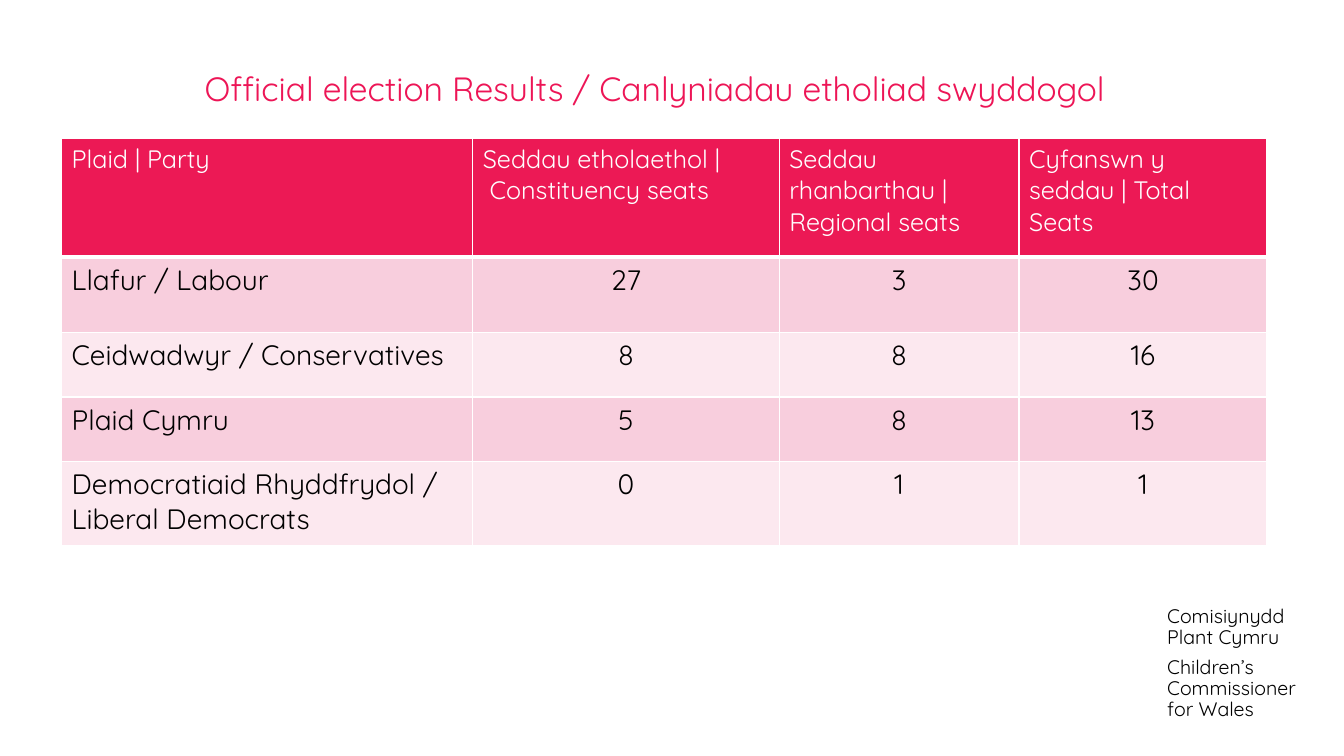
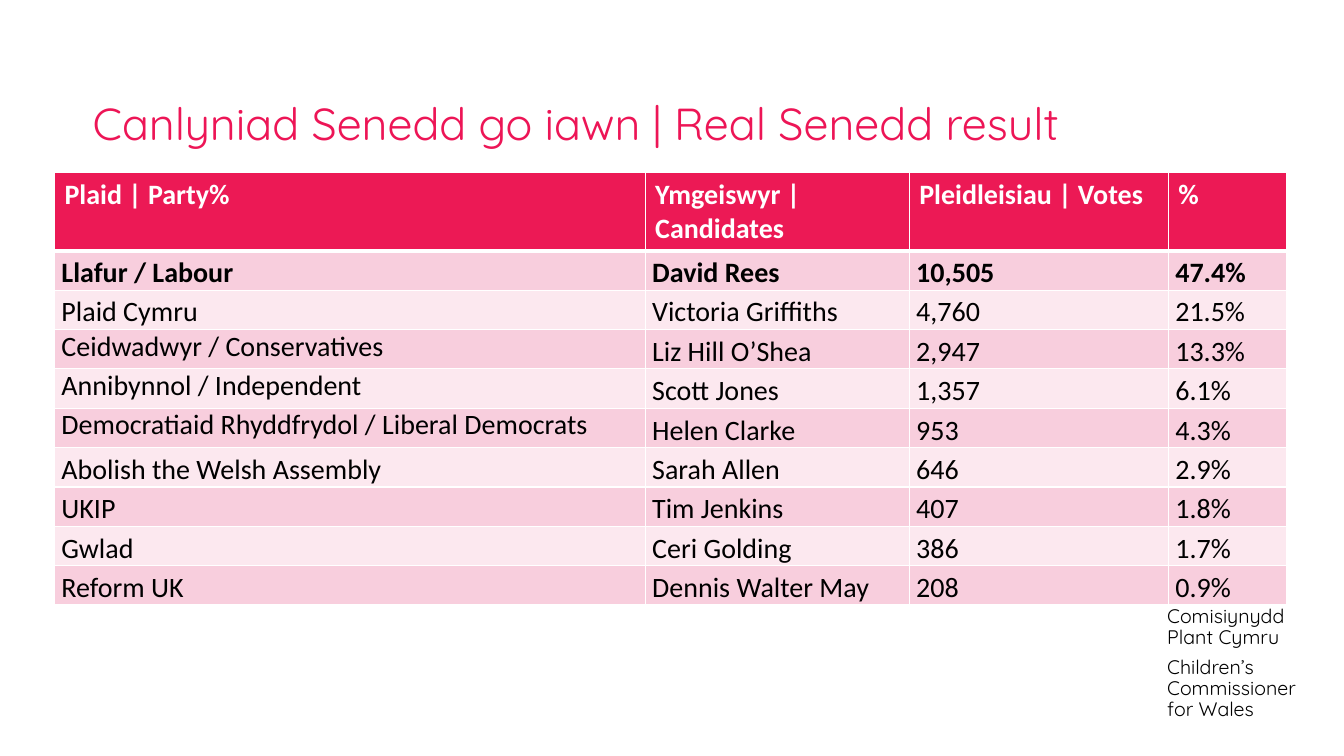
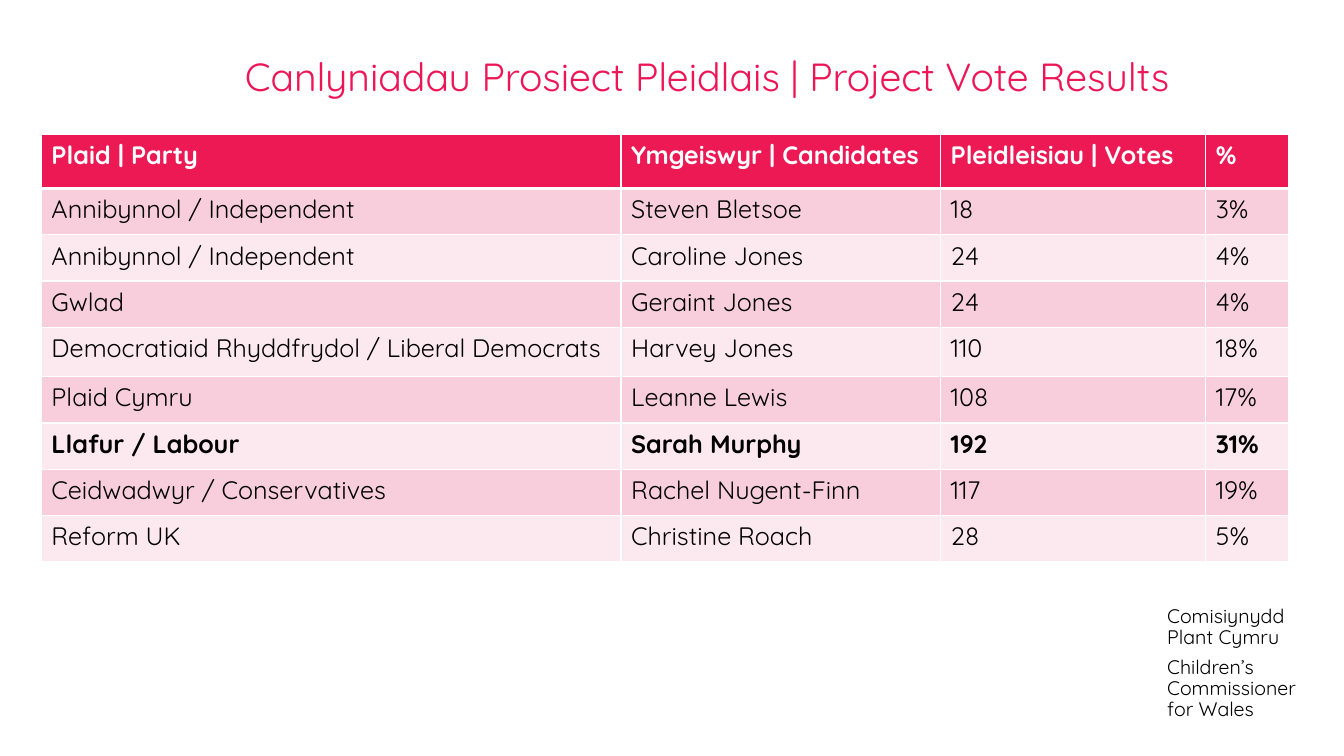
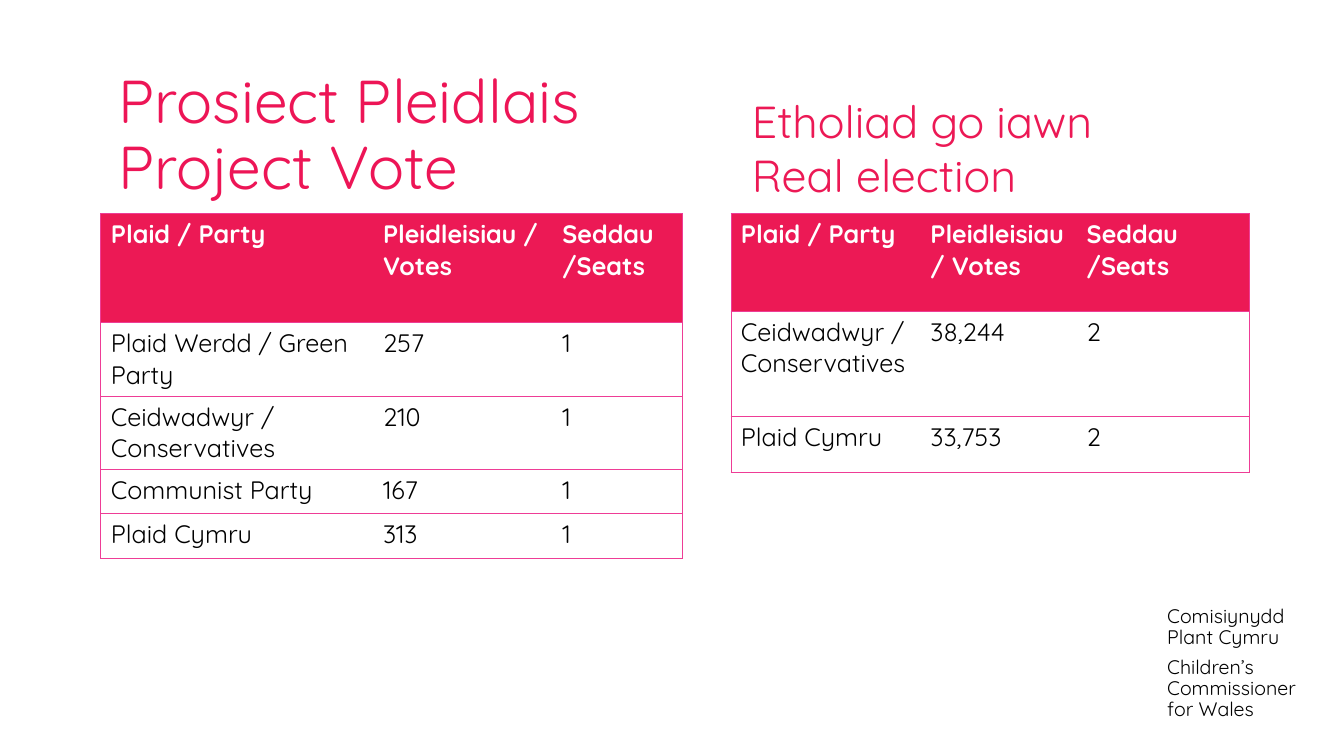
import pptx
import pptx.util
import pptx.dml.color
import pptx.enum.text
import pptx.oxml.ns
import lxml.etree

# Shared look
RED, ROSE, INK, WHITE, EDGE = "EC1955", "ED1556", "000000", "FFFFFF", "EE3D96"
BANDS = ["F8CEDD", "FCE8EF"]
FONT = "Quicksand"
WIDE, HIGH = pptx.util.Inches(13.333), pptx.util.Inches(7.5)
ALIGN = pptx.enum.text.PP_ALIGN
ANCHOR = pptx.enum.text.MSO_ANCHOR


def tint(code):
    return pptx.dml.color.RGBColor.from_string(code)


def across(share):
    """Percent of the slide width."""
    return round(WIDE * share / 100)


def down(share):
    """Percent of the slide height."""
    return round(HIGH * share / 100)


def style(para, size, color, bold=False, font=FONT, space=None):
    if space:
        para.line_spacing = space
    for run in para.runs:
        run.font.name = font
        run.font.size = pptx.util.Pt(size)
        run.font.bold = bold
        run.font.color.rgb = tint(color)


# Text boxes
def label(slide, text, spot, size, color, space=0.9, inset=0):
    left, top, width, height = spot
    box = slide.shapes.add_textbox(across(left), down(top), across(width), down(height))
    frame = box.text_frame
    frame.word_wrap = True
    frame.margin_left = frame.margin_right = pptx.util.Inches(inset)
    frame.margin_top = frame.margin_bottom = pptx.util.Inches(inset / 2)
    frame.text = text
    for para in frame.paragraphs:
        style(para, size, color, space=space)
    return frame


def title(slide, text, spot, size):
    label(slide, text, spot, size, ROSE)


def footer(slide):
    text = "Comisiynydd\vPlant Cymru\nChildren’s\vCommissioner\vfor Wales"
    frame = label(slide, text, (86.85, 80.13, 10.35, 15.33), 14, INK)
    frame.vertical_anchor = ANCHOR.MIDDLE
    frame.paragraphs[0].space_after = pptx.util.Pt(6)


# Tables
def border(cell, side, color, points):
    props = cell._tc.get_or_add_tcPr()
    line = lxml.etree.SubElement(props, pptx.oxml.ns.qn("a:ln" + side))
    line.set("w", str(pptx.util.Pt(points)))
    if not color:
        lxml.etree.SubElement(line, pptx.oxml.ns.qn("a:noFill"))
        return
    fill = lxml.etree.SubElement(line, pptx.oxml.ns.qn("a:solidFill"))
    lxml.etree.SubElement(fill, pptx.oxml.ns.qn("a:srgbClr")).set("val", color)


def frame_cell(cell, row, col, last, lined):
    """Red outlines with no inner uprights, or white rules all round."""
    if lined:
        border(cell, "L", EDGE if col == 0 else None, 0.5)
        border(cell, "R", EDGE if col == last else None, 0.5)
        border(cell, "T", EDGE, 0.5)
        border(cell, "B", EDGE, 0.5)
        return
    border(cell, "L", WHITE, 1)
    border(cell, "R", WHITE, 1)
    border(cell, "T", WHITE, 3 if row == 1 else 1)
    border(cell, "B", WHITE, 3 if row == 0 else 1)


def grid(slide, spot, cols, rows, data, size=18, head=18, font=FONT,
         strong=True, winner=None, lined=False):
    shape = slide.shapes.add_table(len(rows), len(cols), across(spot[0]), down(spot[1]),
                                   across(sum(cols)), down(sum(rows)))
    table = shape.table
    table.first_row = table.horz_banding = False
    for col, width in enumerate(cols):
        table.columns[col].width = across(width)
    for row, height in enumerate(rows):
        table.rows[row].height = down(height)
        for col, text in enumerate(data[row]):
            cell = table.cell(row, col)
            frame_cell(cell, row, col, len(cols) - 1, lined)
            if row and lined:
                cell.fill.background()
            else:
                cell.fill.solid()
                cell.fill.fore_color.rgb = tint(BANDS[(row - 1) % 2] if row else RED)
            cell.text_frame.text = text
            for para in cell.text_frame.paragraphs:
                style(para, size if row else head, INK if row else WHITE,
                      row == winner if row else strong, font)
    return table


def body(table):
    """Cells below the heading, with their row and column."""
    for row in range(1, len(table.rows)):
        for col in range(len(table.columns)):
            yield row, col, table.cell(row, col)


# Slides
def official(slide):
    title(slide, "Official election Results / Canlyniadau etholiad swyddogol",
          (15.23, 9.6, 76.95, 12.13), 24)
    table = grid(slide, (4.58, 18.27), [30.6, 22.8, 17.85, 18.45],
                 [15.73, 10, 8.53, 8.53, 11.07], [
        ["Plaid | Party", "Seddau etholaethol |\n Constituency seats",
         "Seddau rhanbarthau | Regional seats", "Cyfanswn y seddau | Total Seats"],
        ["Llafur / Labour", "27", "3", "30"],
        ["Ceidwadwyr / Conservatives", "8", "8", "16"],
        ["Plaid Cymru", "5", "8", "13"],
        ["Democratiaid Rhyddfrydol / Liberal Democrats", "0", "1", "1"],
    ], size=20, strong=False)
    for row, col, cell in body(table):
        if col:
            cell.text_frame.paragraphs[0].alignment = ALIGN.CENTER


def senedd(slide):
    title(slide, "Canlyniad Senedd go iawn | Real Senedd result",
          (6.9, 13.47, 88.8, 6.4), 32)
    table = grid(slide, (4.05, 22.8), [43.95, 19.65, 19.28, 8.78],
                 [10.37] + [5.21] * 9, [
        ["Plaid | Party%", "Ymgeiswyr | Candidates", "Pleidleisiau | Votes", "%"],
        ["Llafur / Labour", "David Rees", "10,505", "47.4%"],
        ["Plaid Cymru", "Victoria Griffiths", "4,760", "21.5%"],
        ["Ceidwadwyr / Conservatives", "Liz Hill O’Shea", "2,947", "13.3%"],
        ["Annibynnol / Independent", "Scott Jones", "1,357", "6.1%"],
        ["Democratiaid Rhyddfrydol / Liberal Democrats", "Helen Clarke", "953", "4.3%"],
        ["Abolish the Welsh Assembly", "Sarah Allen", "646", "2.9%"],
        ["UKIP", "Tim Jenkins", "407", "1.8%"],
        ["Gwlad", "Ceri Golding", "386", "1.7%"],
        ["Reform UK", "Dennis Walter May", "208", "0.9%"],
    ], size=20, head=20, font="Calibri", winner=1)
    for row, col, cell in body(table):
        cell.margin_left = cell.margin_right = pptx.util.Inches(0.07)
        cell.margin_top = cell.margin_bottom = 0
        if col or row not in (3, 4, 5):
            cell.text_frame.paragraphs[0].line_spacing = 1.15


def project(slide):
    title(slide, "Canlyniadau Prosiect Pleidlais | Project Vote Results",
          (18.23, 7.6, 70.58, 10.13), 28)
    grid(slide, (3.08, 17.73), [43.13, 23.78, 19.73, 6.15],
         [7.2] + [6.13] * 3 + [6.53] + [6.13] * 4, [
        ["Plaid | Party", "Ymgeiswyr | Candidates", "Pleidleisiau | Votes", "%"],
        ["Annibynnol / Independent", "Steven Bletsoe", "18", "3%"],
        ["Annibynnol / Independent", "Caroline Jones", "24", "4%"],
        ["Gwlad", "Geraint Jones", "24", "4%"],
        ["Democratiaid Rhyddfrydol / Liberal Democrats", "Harvey Jones", "110", "18%"],
        ["Plaid Cymru", "Leanne Lewis", "108", "17%"],
        ["Llafur / Labour", "Sarah Murphy", "192", "31%"],
        ["Ceidwadwyr / Conservatives", "Rachel Nugent-Finn", "117", "19%"],
        ["Reform UK", "Christine Roach", "28", "5%"],
    ], winner=6)


def versus(slide):
    heads = ["Plaid / Party", "Pleidleisiau / Votes", "Seddau /Seats"]
    title(slide, "Prosiect Pleidlais\vProject Vote", (8.85, 9.47, 38.78, 10.13), 43.2)
    grid(slide, (7.5, 28.27), [20.25, 13.35, 9.68], [14.4, 9.71, 9.71, 5.87, 5.87], [
        heads,
        ["Plaid Werdd / Green Party", "257", "1"],
        ["Ceidwadwyr / Conservatives", "210", "1"],
        ["Communist Party", "167", "1"],
        ["Plaid Cymru", "313", "1"],
    ], lined=True)
    grid(slide, (54.38, 28.27), [14.1, 11.63, 12.83], [12.87, 13.87, 7.47], [
        heads,
        ["Ceidwadwyr / Conservatives", "38,244", "2"],
        ["Plaid Cymru", "33,753", "2"],
    ], lined=True)
    label(slide, "Etholiad go iawn\nReal election", (55.2, 11.73, 30.6, 15.73),
          32, RED, space=None, inset=0.1)


def main():
    deck = pptx.Presentation()
    deck.slide_width, deck.slide_height = WIDE, HIGH
    for build in (official, senedd, project, versus):
        slide = deck.slides.add_slide(deck.slide_layouts[6])
        footer(slide)
        build(slide)
    deck.save("out.pptx")


if __name__ == "__main__":
    main()
